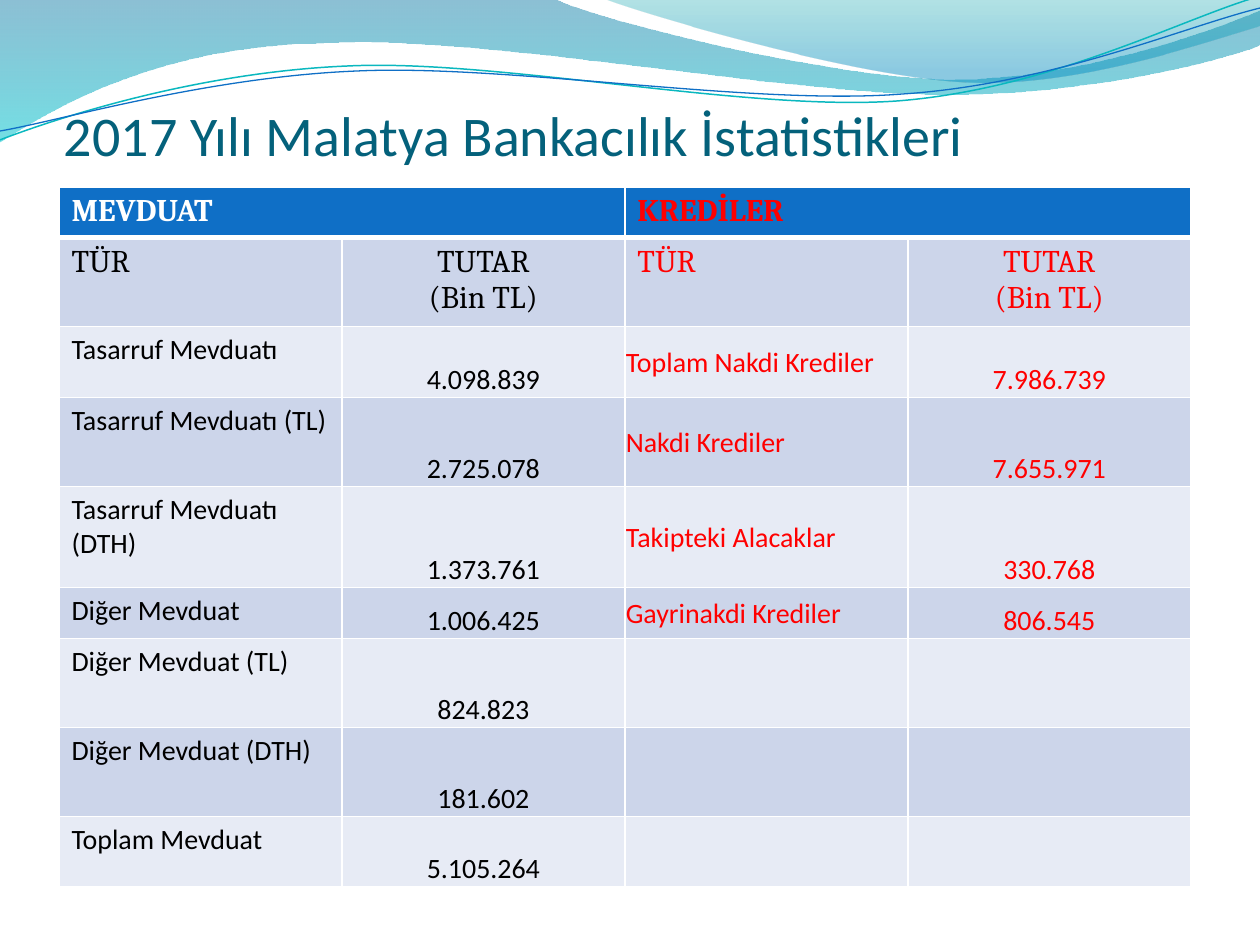
import math
from dataclasses import dataclass

from lxml import etree
from pptx import Presentation, util as u
from pptx.dml.color import RGBColor
from pptx.enum import text
from pptx.oxml.ns import qn

EMU_PER_PX = 914400 / 126
LINE_TILT = 357.3


@dataclass(frozen=True)
class Theme:
    body_font: str = "Calibri"
    head_font: str = "Cambria"
    title_size: int = 32
    head_size: int = 18
    body_size: int = 16
    title: str = "04617B"
    header: str = "0F6FC6"
    bands: tuple = ("CCD5EA", "E7EBF5")
    deposit: str = "000000"
    loan: str = "FF0000"
    white: str = "FFFFFF"


THEME = Theme()
ALIGN, ANCHOR = text.PP_ALIGN, text.MSO_ANCHOR

# Each wave: start point, then segments of one point (line) or three (Bézier).
# Gradient stops: position, colour, opacity in percent.
FILLED_WAVES = [
    ((0, 0),
     [[(554, -1)], [(600, 21), (837, 79), (955, 79)],
      [(1075, 79), (1207, 33), (1260, 11)], [(1261, 45)],
      [(1239, 55), (1096, 96), (940, 94)], [(783, 94), (481, 35), (324, 43)],
      [(163, 45), (58, 105), (-1, 142)], [(0, 0)]],
     [(0, "0074A1", 45), (1, "00C6CF", 55)]),
    ((604, -1),
     [[(641, 14), (859, 78), (969, 82)], [(1079, 87), (1211, 40), (1260, 26)],
      [(1260, 0)], [(604, -1)]],
     [(0, "00A1A9", 30), (0.8, "008BBF", 45)]),
]
# Line waves add the centre they are tilted about, a colour and a width.
LINE_WAVES = [
    ((0, 140),
     [[(60, 117), (199, 72), (349, 66)], [(498, 59), (747, 112), (898, 101)],
      [(1050, 89), (1182, 19), (1257, -3)]], (629, 72), "0AB8BF", 0.85),
    ((0, 131),
     [[(59, 121), (207, 77), (357, 71)], [(508, 64), (752, 106), (903, 94)],
      [(1053, 84), (1186, 26), (1260, 8)]], (629, 74), "0F6FC6", 0.75),
]

COLUMN_WIDTH = 283
ROW_HEIGHTS = [50, 89, 71, 89, 101, 51, 89, 89, 70]
ROWS = [
    ("MEVDUAT", "", "KREDİLER", ""),
    ("TÜR", "TUTAR\n(Bin TL)", "TÜR", "TUTAR\n(Bin TL)"),
    ("Tasarruf Mevduatı", "4.098.839", "Toplam Nakdi Krediler", "7.986.739"),
    ("Tasarruf Mevduatı (TL)", "2.725.078", "Nakdi Krediler", "7.655.971"),
    ("Tasarruf Mevduatı (DTH)", "1.373.761", "Takipteki Alacaklar", "330.768"),
    ("Diğer Mevduat", "1.006.425", "Gayrinakdi Krediler", "806.545"),
    ("Diğer Mevduat (TL)", "824.823", "", ""),
    ("Diğer Mevduat (DTH)", "181.602", "", ""),
    ("Toplam Mevduat", "5.105.264", "", ""),
]


def px(value):
    return u.Emu(round(value * EMU_PER_PX))


def rgb(value):
    return RGBColor.from_string(value)


def set_all(target, values):
    for name, value in values.items():
        setattr(target, name, value)


def write(frame, content, font, align):
    frame.text = content
    values = {name: value for name, value in font.items() if name != "color"}
    for paragraph in frame.paragraphs:
        paragraph.alignment = align
        for run in paragraph.runs:
            set_all(run.font, values)
            run.font.color.rgb = rgb(font["color"])


def untilt(point, center):
    """Give the place a point has before the shape is turned by LINE_TILT."""
    angle = math.radians(-LINE_TILT)
    dx, dy = point[0] - center[0], point[1] - center[1]
    return (center[0] + dx * math.cos(angle) - dy * math.sin(angle),
            center[1] + dx * math.sin(angle) + dy * math.cos(angle))


def add_wave(slide, start, segments, close):
    """Add an outline, then join each three-point segment into a curve."""
    points = [(px(x), px(y)) for segment in segments for x, y in segment]
    builder = slide.shapes.build_freeform(px(start[0]), px(start[1]))
    builder.add_line_segments(points, close=close)
    shape = builder.convert_to_shape()
    shape.shadow.inherit = False
    line_nodes = iter(list(shape.element.spPr.iter(qn("a:lnTo"))))
    for segment in segments:
        nodes = [next(line_nodes) for _ in segment]
        if len(nodes) == 3:
            curve = etree.Element(qn("a:cubicBezTo"))
            nodes[0].addprevious(curve)
            for node in nodes:
                curve.append(node[0])
                node.getparent().remove(node)
    return shape


def add_filled_wave(slide, start, segments, stops):
    shape = add_wave(slide, start, segments, True)
    shape.line.fill.background()
    shape.fill.gradient()
    shape.fill.gradient_angle = 270
    for stop, (position, color, _) in zip(shape.fill.gradient_stops, stops):
        stop.position = position
        stop.color.rgb = rgb(color)
    for node, (_, _, opacity) in zip(shape.element.spPr.iter(qn("a:srgbClr")), stops):
        etree.SubElement(node, qn("a:alpha"), val=str(opacity * 1000))


def add_line_wave(slide, start, segments, center, color, width):
    level = [[untilt(point, center) for point in segment] for segment in segments]
    shape = add_wave(slide, untilt(start, center), level, False)
    shape.rotation = LINE_TILT
    shape.fill.background()
    shape.line.color.rgb = rgb(color)
    shape.line.width = u.Pt(width)


def add_title(slide, content):
    frame = slide.shapes.add_textbox(px(64), px(97), px(1134), px(71)).text_frame
    set_all(frame, {"word_wrap": True, "vertical_anchor": ANCHOR.BOTTOM,
                    "margin_left": 0, "margin_right": 0,
                    "margin_top": px(6), "margin_bottom": 0})
    write(frame, content, {"name": THEME.body_font, "size": u.Pt(THEME.title_size),
                           "color": THEME.title}, ALIGN.JUSTIFY)


def set_borders(cell, row):
    """Draw white cell edges, thicker under the header row."""
    widths = {"lnL": 1, "lnR": 1, "lnT": 3 if row == 1 else 1, "lnB": 3 if row == 0 else 1}
    properties = cell._tc.get_or_add_tcPr()
    for tag, width in widths.items():
        line = etree.SubElement(properties, qn(f"a:{tag}"), w=str(u.Pt(width)))
        fill = etree.SubElement(line, qn("a:solidFill"))
        etree.SubElement(fill, qn("a:srgbClr"), val=THEME.white)


def format_cell(cell, row, column, content):
    is_head, is_amount, is_loan = row < 2, column % 2 == 1, column >= 2
    set_borders(cell, row)
    cell.fill.solid()
    cell.fill.fore_color.rgb = rgb(THEME.bands[(row - 1) % 2] if row else THEME.header)
    if not content:
        return
    align = ALIGN.CENTER if is_amount else ALIGN.LEFT
    if not is_head and column:
        set_all(cell, {"margin_left": px(1), "margin_right": px(1),
                       "margin_top": px(1), "margin_bottom": 0,
                       "vertical_anchor": ANCHOR.BOTTOM if is_amount else ANCHOR.MIDDLE})
        align = ALIGN.CENTER if is_amount else ALIGN.JUSTIFY
    base_color = THEME.deposit if row else THEME.white
    write(cell.text_frame, content,
          {"name": THEME.head_font if is_head else THEME.body_font,
           "size": u.Pt(THEME.head_size if is_head else THEME.body_size),
           "bold": row == 0, "color": THEME.loan if is_loan else base_color}, align)


def add_bank_table(slide):
    columns = len(ROWS[0])
    table = slide.shapes.add_table(len(ROWS), columns, px(59), px(187),
                                   px(COLUMN_WIDTH * columns), px(sum(ROW_HEIGHTS))).table
    for column in table.columns:
        column.width = px(COLUMN_WIDTH)
    for row, height in zip(table.rows, ROW_HEIGHTS):
        row.height = px(height)
    for first in (0, 2):
        table.cell(0, first).merge(table.cell(0, first + 1))
    for row, contents in enumerate(ROWS):
        for column, content in enumerate(contents):
            format_cell(table.cell(row, column), row, column, content)


def main():
    presentation = Presentation()
    set_all(presentation, {"slide_width": px(1260), "slide_height": px(945)})
    slide = presentation.slides.add_slide(presentation.slide_layouts[6])
    for wave in FILLED_WAVES:
        add_filled_wave(slide, *wave)
    for wave in LINE_WAVES:
        add_line_wave(slide, *wave)
    add_title(slide, "2017 Yılı Malatya Bankacılık İstatistikleri")
    add_bank_table(slide)
    presentation.save("out.pptx")


if __name__ == "__main__":
    main()
